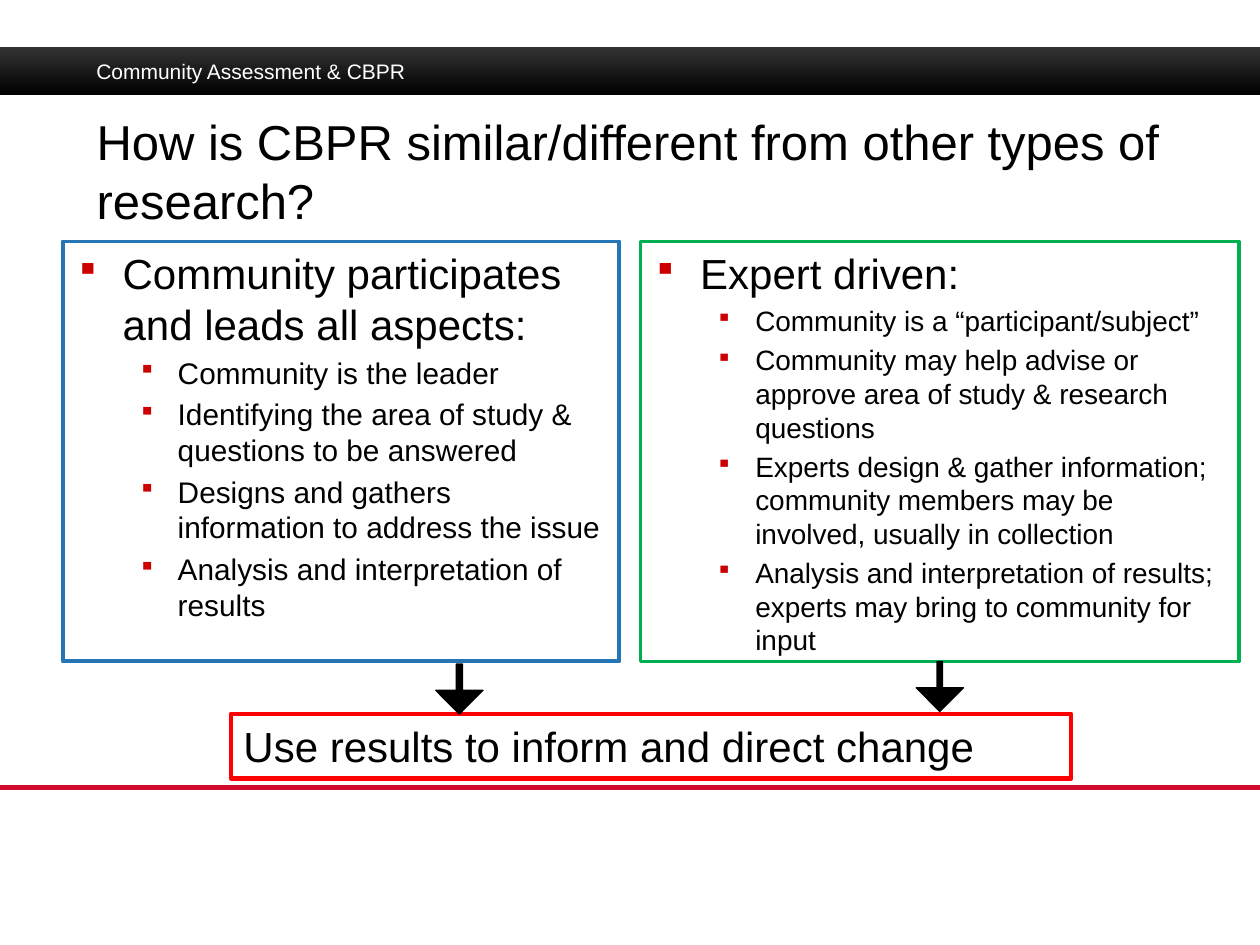
from dataclasses import dataclass

from lxml.etree import SubElement
from pptx import Presentation
from pptx.dml.color import RGBColor
from pptx.enum.shapes import MSO_CONNECTOR, MSO_SHAPE
from pptx.enum.text import MSO_ANCHOR, MSO_AUTO_SIZE, PP_ALIGN
from pptx.oxml.ns import qn
from pptx.util import Emu, Pt

BLACK = RGBColor(0x00, 0x00, 0x00)
CHARCOAL = RGBColor(0x33, 0x33, 0x33)
WHITE = RGBColor(0xFF, 0xFF, 0xFF)
BLUE = RGBColor(0x26, 0x75, 0xB4)
GREEN = RGBColor(0x00, 0xB0, 0x50)
RED = RGBColor(0xFF, 0x00, 0x00)
CRIMSON = RGBColor(0xCF, 0x0A, 0x2C)
BULLET_RED = RGBColor(0xCC, 0x00, 0x00)
FONT = "Arial"
PANEL_TOP, PANEL_HEIGHT = 184, 320
INDENTS = [(36, 36), (78, 30)]


@dataclass
class Panel:
    left: int
    width: int
    color: RGBColor
    line_pt: float
    heading: str
    item_pt: int
    items: list[str]


@dataclass
class Arrow:
    left: int
    top: int
    shaft: float


PANELS = [
    Panel(48, 424, BLUE, 2.25, "Community participates and leads all aspects:", 17, [
        "Community is the leader",
        "Identifying the area of study & questions to be answered",
        "Designs and gathers information to address the issue",
        "Analysis and interpretation of results",
    ]),
    Panel(488, 456, GREEN, 2, "Expert driven:", 16, [
        "Community is a “participant/subject”",
        "Community may help advise or approve area of study & research questions",
        "Experts design & gather information; community members may be involved, "
        "usually in collection",
        "Analysis and interpretation of results; experts may bring to community for input",
    ]),
]
ARROWS = [Arrow(332, 506, 0.135), Arrow(698, 504, 0.115)]


def px(n: int) -> Emu:
    return Emu(n * 9525)


def add_box(s, left: int, top: int, width: int, height: int, kind=MSO_SHAPE.RECTANGLE):
    sp = s.shapes.add_shape(kind, px(left), px(top), px(width), px(height))
    sp.shadow.inherit = False
    return sp


def outline(sp, color: RGBColor, width: float) -> None:
    sp.fill.background()
    sp.line.color.rgb = color
    sp.line.width = Pt(width)


def prepare(tf):
    tf.word_wrap = True
    tf.auto_size = MSO_AUTO_SIZE.NONE
    tf.vertical_anchor = MSO_ANCHOR.TOP
    return tf


def write(p, text: str, size: int, color: RGBColor = BLACK) -> None:
    p.alignment = PP_ALIGN.LEFT
    r = p.add_run()
    r.text = text
    r.font.name = FONT
    r.font.size = Pt(size)
    r.font.color.rgb = color


def set_bullet(p, level: int) -> None:
    p.level = level
    margin, hang = INDENTS[level]
    pPr = p._p.get_or_add_pPr()
    pPr.set("marL", str(px(margin)))
    pPr.set("indent", str(px(-hang)))
    color = SubElement(pPr, qn("a:buClr"))
    SubElement(color, qn("a:srgbClr")).set("val", str(BULLET_RED))
    SubElement(pPr, qn("a:buSzPct")).set("val", "80000")
    SubElement(pPr, qn("a:buChar")).set("char", "▪")


def add_header(s) -> None:
    bar = add_box(s, 0, 36, 960, 36)
    bar.line.fill.background()
    bar.fill.gradient()
    bar.fill.gradient_angle = 270
    for stop, color, position in zip(bar.fill.gradient_stops, (CHARCOAL, BLACK), (0, 1)):
        stop.color.rgb = color
        stop.position = position
    tb = s.shapes.add_textbox(px(64), px(40), px(536), px(32))
    write(prepare(tb.text_frame).paragraphs[0], "Community Assessment & CBPR", 12, WHITE)


def add_title(s) -> None:
    sp = s.shapes.title
    sp.left, sp.top, sp.width, sp.height = px(64), px(80), px(832), px(72)
    p = prepare(sp.text_frame).paragraphs[0]
    write(p, "How is CBPR similar/different from other types of research?", 28)


def add_panel(s, panel: Panel) -> None:
    sp = add_box(s, panel.left, PANEL_TOP, panel.width, PANEL_HEIGHT)
    outline(sp, panel.color, panel.line_pt)
    tf = prepare(sp.text_frame)
    tf.margin_right = px(12)
    p = tf.paragraphs[0]
    set_bullet(p, 0)
    write(p, panel.heading, 24)
    for item in panel.items:
        p = tf.add_paragraph()
        set_bullet(p, 1)
        p.space_before = Pt(round(panel.item_pt * 0.2, 1))
        write(p, item, panel.item_pt)


def add_result(s) -> None:
    sp = add_box(s, 176, 544, 640, 49)
    outline(sp, RED, 2.75)
    write(prepare(sp.text_frame).paragraphs[0], "Use results to inform and direct change", 24)


def add_arrow(s, arrow: Arrow) -> None:
    sp = add_box(s, arrow.left, arrow.top, 36, 38, MSO_SHAPE.DOWN_ARROW)
    sp.adjustments[0] = arrow.shaft
    sp.adjustments[1] = 0.5
    sp.fill.solid()
    sp.fill.fore_color.rgb = BLACK
    sp.line.color.rgb = BLACK
    sp.line.width = Pt(0.75)


def add_footer_rule(s) -> None:
    rule = s.shapes.add_connector(MSO_CONNECTOR.STRAIGHT, px(0), px(600), px(960), px(600))
    rule.line.color.rgb = CRIMSON
    rule.line.width = Pt(3)
    SubElement(rule._element.spPr, qn("a:effectLst"))


def main() -> None:
    prs = Presentation()
    prs.slide_width, prs.slide_height = px(960), px(720)
    s = prs.slides.add_slide(prs.slide_layouts[5])
    add_header(s)
    add_footer_rule(s)
    add_title(s)
    for panel in PANELS:
        add_panel(s, panel)
    add_result(s)
    for arrow in ARROWS:
        add_arrow(s, arrow)
    prs.save("out.pptx")


if __name__ == "__main__":
    main()
